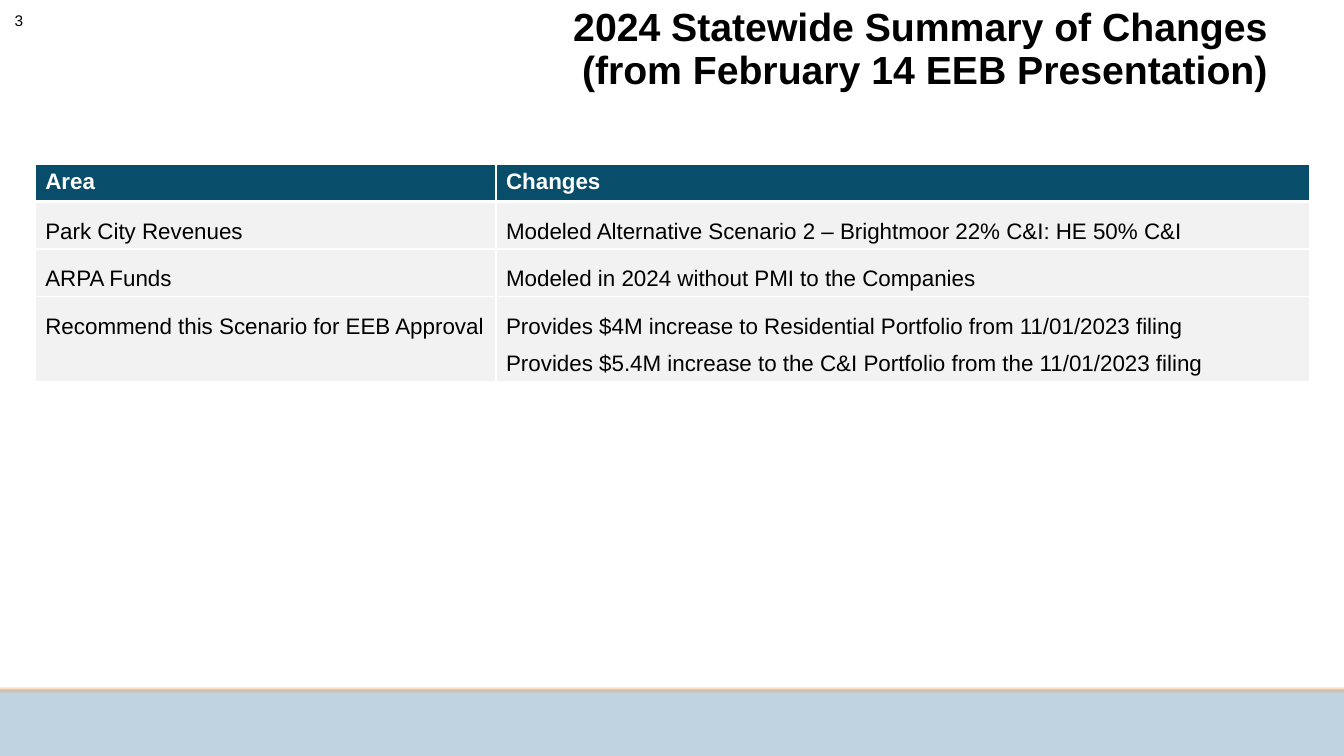
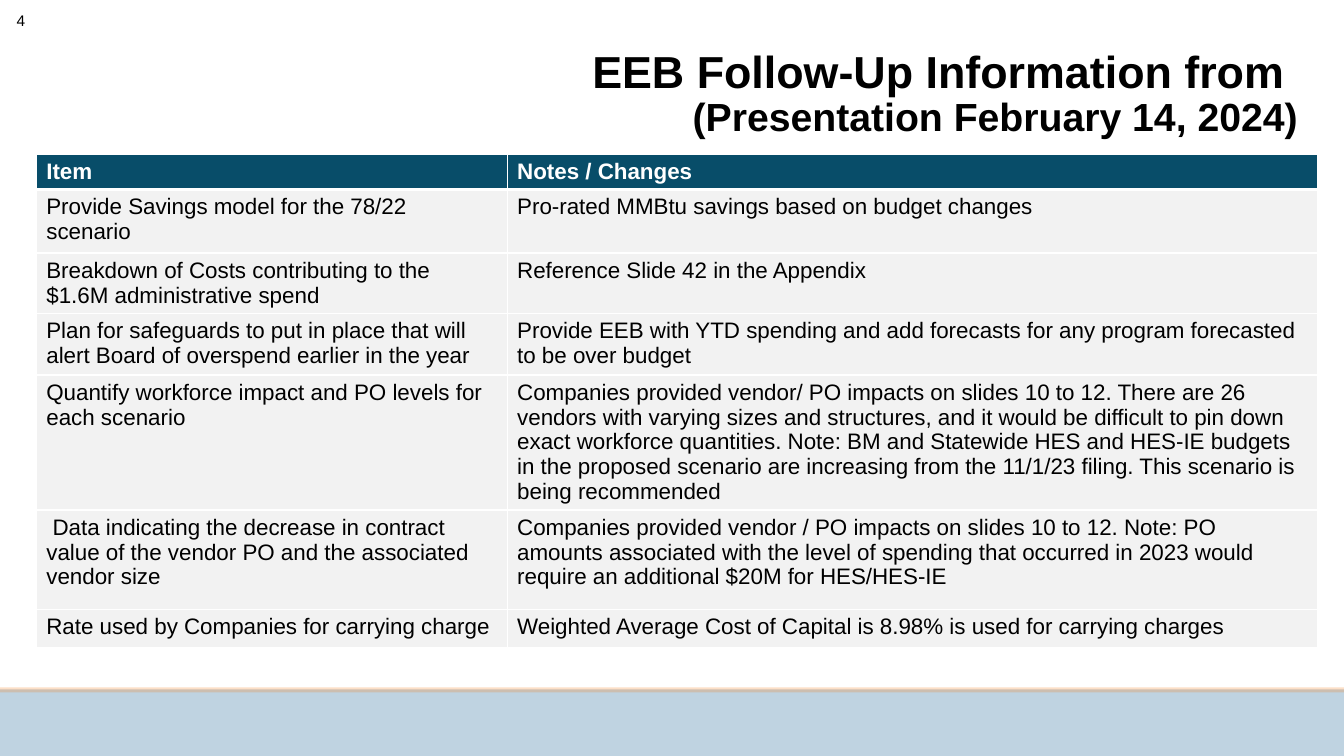
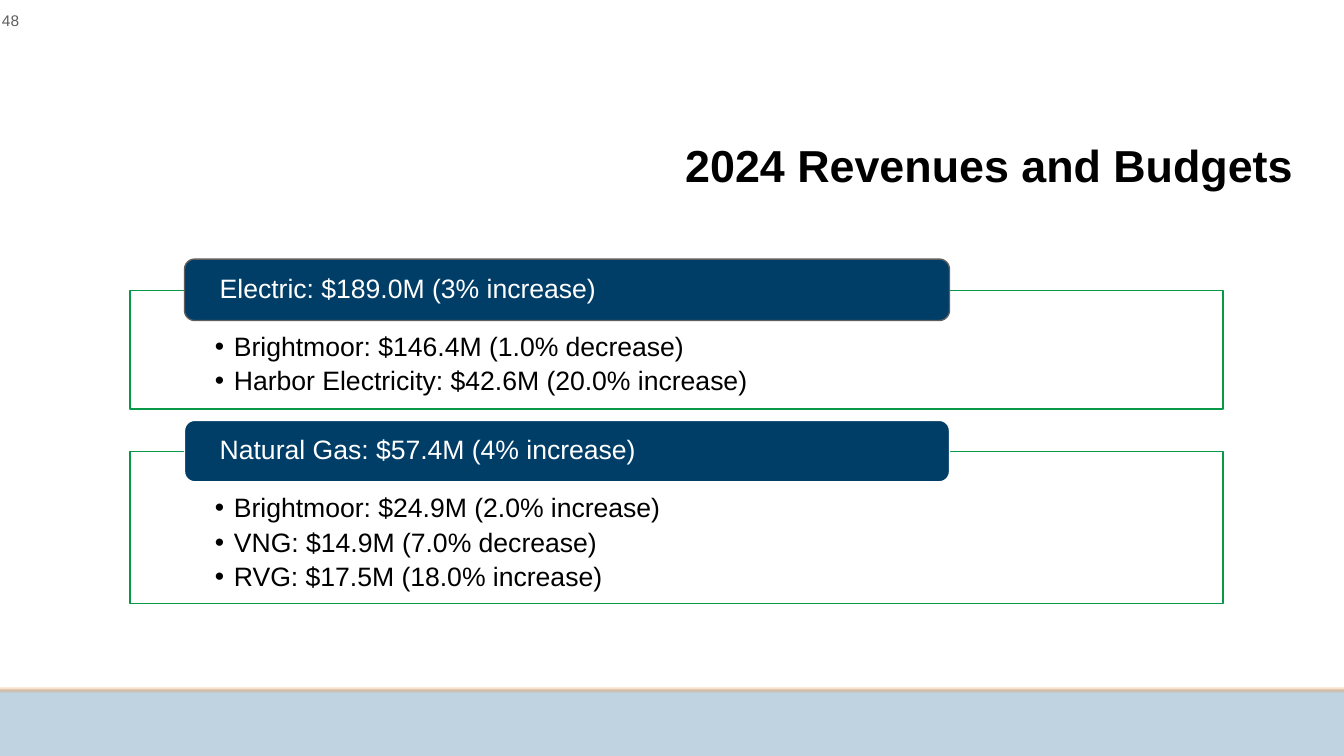
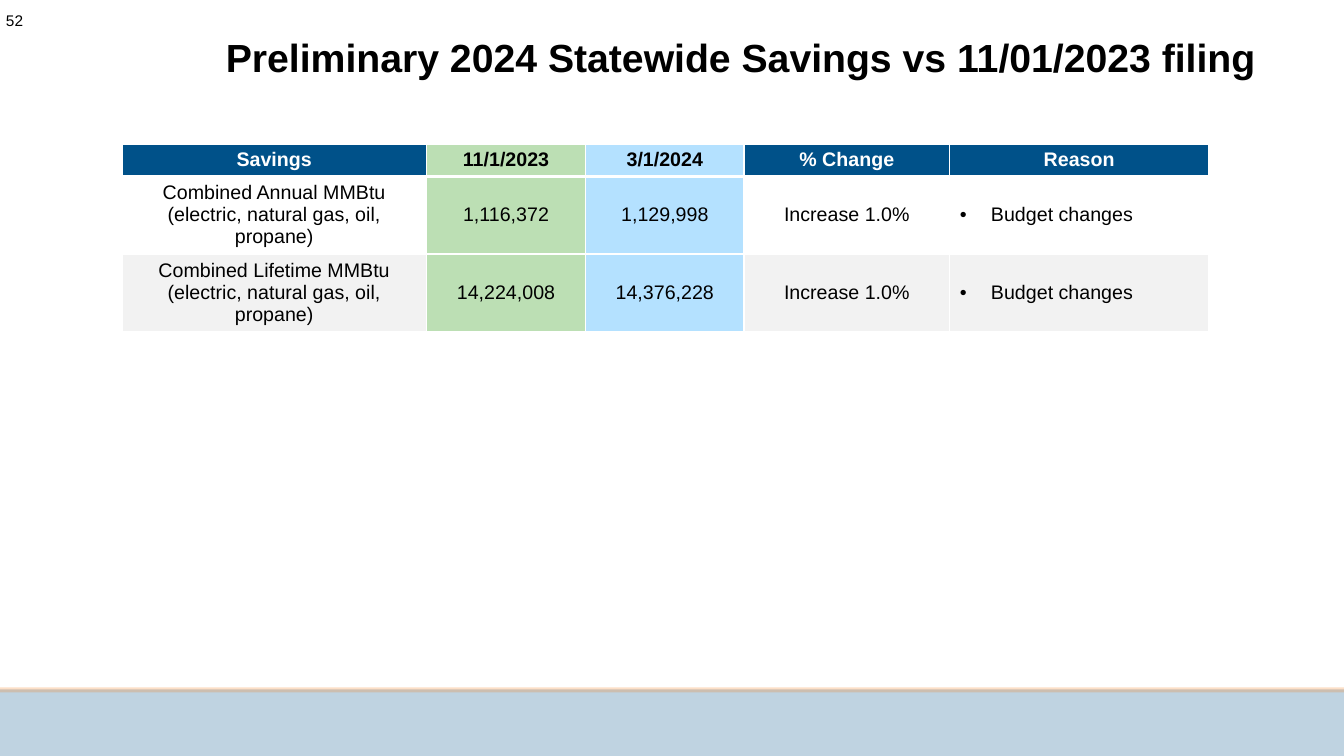
import pptx
import pptx.util
import pptx.dml.color
import pptx.enum.shapes
import pptx.enum.text
import pptx.oxml.ns
from lxml import etree

Inches = pptx.util.Inches
Pt = pptx.util.Pt
RGBColor = pptx.dml.color.RGBColor
Align = pptx.enum.text.PP_ALIGN
Anchor = pptx.enum.text.MSO_ANCHOR
Shape = pptx.enum.shapes.MSO_SHAPE
qn = pptx.oxml.ns.qn

FONT = "Arial"
BLACK = RGBColor(0, 0, 0)
WHITE = RGBColor(255, 255, 255)
GRAY = RGBColor(0x5E, 0x5E, 0x5E)
PALE_GRAY = RGBColor(0xF2, 0xF2, 0xF2)
BLUE = RGBColor(0x00, 0x51, 0x89)
NAVY = RGBColor(0x00, 0x3D, 0x67)
TEAL = RGBColor(0x08, 0x4D, 0x69)
ORANGE = RGBColor(0xF5, 0x82, 0x20)
GREEN = RGBColor(0x08, 0x99, 0x48)
PALE_GREEN = RGBColor(0xBC, 0xDF, 0xB4)
PALE_BLUE = RGBColor(0xB4, 0xE1, 0xFF)

SLIDE_WIDTH, SLIDE_HEIGHT = 13.33, 7.5
BANDS = [
    ((0, 6.84, SLIDE_WIDTH, 0.66), BLUE),
    ((0, 6.82, SLIDE_WIDTH, 0.05), ORANGE),
]

CHANGES = [
    ["Area", "Changes"],
    ["Park City Revenues", "Modeled Alternative Scenario 2 – Brightmoor 22% C&I: HE 50% C&I"],
    ["ARPA Funds", "Modeled in 2024 without PMI to the Companies"],
    ["Recommend this Scenario for EEB Approval",
     "Provides $4M increase to Residential Portfolio from 11/01/2023 filing\n"
     "Provides $5.4M increase to the C&I Portfolio from the 11/01/2023 filing"],
]
FOLLOW_UP = [
    ["Item", "Notes / Changes"],
    ["Provide Savings model for the 78/22 scenario",
     "Pro-rated MMBtu savings based on budget changes"],
    ["Breakdown of Costs contributing to the $1.6M administrative spend",
     "Reference Slide 42 in the Appendix"],
    ["Plan for safeguards to put in place that will alert Board of overspend earlier in the year",
     "Provide EEB with YTD spending and add forecasts for any program forecasted to be over budget"],
    ["Quantify workforce impact and PO levels for each scenario",
     "Companies provided vendor/ PO impacts on slides 10 to 12. There are 26 vendors with varying "
     "sizes and structures, and it would be difficult to pin down exact workforce quantities. "
     "Note: BM and Statewide HES and HES-IE budgets in the proposed scenario are increasing from "
     "the 11/1/23 filing. This scenario is being recommended"],
    [" Data indicating the decrease in contract value of the vendor PO and the associated vendor size",
     "Companies provided vendor / PO impacts on slides 10 to 12. Note: PO amounts associated with "
     "the level of spending that occurred in 2023 would require an additional $20M for HES/HES-IE"],
    ["Rate used by Companies for carrying charge",
     "Weighted Average Cost of Capital is 8.98% is used for carrying charges"],
]
SAVINGS = [
    ["Savings", "11/1/2023", "3/1/2024", "% Change", "Reason"],
    ["Combined Annual MMBtu (electric, natural gas, oil, propane)",
     "1,116,372", "1,129,998", "Increase 1.0%", "Budget changes"],
    ["Combined Lifetime MMBtu (electric, natural gas, oil, propane)",
     "14,224,008", "14,376,228", "Increase 1.0%", "Budget changes"],
]
BUDGETS = [
    ((1.29, 2.88, 10.84, 1.18), GRAY, "Electric: $189.0M (3% increase)",
     ["Brightmoor: $146.4M (1.0% decrease)", "Harbor Electricity: $42.6M (20.0% increase)"]),
    ((1.29, 4.48, 10.84, 1.51), WHITE, "Natural Gas: $57.4M (4% increase)",
     ["Brightmoor: $24.9M (2.0% increase)", "VNG: $14.9M (7.0% decrease)",
      "RVG: $17.5M (18.0% increase)"]),
]


def apply(target, values):
    """Set each attribute named in a dict of format values."""
    for name, value in values.items():
        setattr(target, name, value)


def place(shape, box):
    """Move and size a shape to a box in inches."""
    apply(shape, dict(zip(("left", "top", "width", "height"), map(Inches, box))))


def set_frame(frame, anchor, insets):
    """Set the wrapping, anchor and insets of a text frame."""
    names = ("margin_left", "margin_top", "margin_right", "margin_bottom")
    apply(frame, {"word_wrap": True, "auto_size": pptx.enum.text.MSO_AUTO_SIZE.NONE,
                  "vertical_anchor": anchor, **dict(zip(names, map(Inches, insets)))})


def style_run(run, size, color, bold=False):
    """Format one run of text."""
    apply(run.font, {"name": FONT, "size": Pt(size), "bold": bold})
    run.font.color.rgb = color


def write(frame, lines, size, color, bold=False, **paragraph_format):
    """Fill a text frame with one formatted paragraph per line."""
    frame.text = "\n".join(lines)
    for paragraph in frame.paragraphs:
        apply(paragraph, paragraph_format)
        for run in paragraph.runs:
            style_run(run, size, color, bold)


def add_bullet(paragraph, indent):
    """Give a paragraph a hanging bullet."""
    properties = paragraph._p.get_or_add_pPr()
    properties.set("marL", str(Inches(indent)))
    properties.set("indent", str(-Inches(indent)))
    etree.SubElement(properties, qn("a:buFont"), typeface=FONT)
    etree.SubElement(properties, qn("a:buChar"), char="•")


def add_box(slide, kind, box, fill, line=None):
    """Add a filled preset shape, outlined when a line colour is given."""
    shape = slide.shapes.add_shape(kind, *map(Inches, box))
    shape.shadow.inherit = False
    shape.fill.solid()
    shape.fill.fore_color.rgb = fill
    if line is None:
        shape.line.fill.background()
    else:
        shape.line.color.rgb = line
        shape.line.width = Pt(1)
    return shape


def move_bands_to_layout(slide):
    """Draw the translucent footer bands and put them on the slide layout."""
    tree = slide.slide_layout.element.cSld.spTree
    for index, (box, color) in enumerate(BANDS):
        band = add_box(slide, Shape.RECTANGLE, box, color)
        fill_color = band.element.spPr.find(qn("a:solidFill"))[0]
        etree.SubElement(fill_color, qn("a:alpha"), val="25000")
        tree.insert(2 + index, band.element)


def add_slide(presentation, number, box, lines, sizes, number_right=0.23, number_color=BLACK):
    """Add a slide with its right-aligned title and page number."""
    slide = presentation.slides.add_slide(presentation.slide_layouts[5])
    title = slide.shapes.title
    place(title, box)
    set_frame(title.text_frame, Anchor.BOTTOM, (0.1, 0.05, 0.1, 0.05))
    paragraph = title.text_frame.paragraphs[0]
    apply(paragraph, {"alignment": Align.RIGHT, "line_spacing": 0.9})
    for index, (line, size) in enumerate(zip(lines, sizes)):
        if index:
            paragraph.add_line_break()
        run = paragraph.add_run()
        run.text = line
        style_run(run, size, BLACK, True)
    page = slide.shapes.add_textbox(0, 0, Inches(number_right), Inches(0.4))
    set_frame(page.text_frame, Anchor.MIDDLE, (0, 0.05, 0, 0.05))
    write(page.text_frame, [number], 11, number_color, alignment=Align.RIGHT)
    return slide


def set_borders(cell, bottom):
    """Draw white borders around a cell."""
    properties = cell._tc.get_or_add_tcPr()
    for index, (side, width) in enumerate(zip("LRTB", (1, 1, 1, bottom))):
        line = etree.Element(qn(f"a:ln{side}"), w=str(Pt(width)))
        fill = etree.SubElement(line, qn("a:solidFill"))
        etree.SubElement(fill, qn("a:srgbClr"), val=str(WHITE))
        properties.insert(index, line)


def add_table(slide, origin, widths, heights, rows, size, style_cell):
    """Add a table whose cell looks come from style_cell(row, column)."""
    box = (*origin, sum(widths), sum(heights))
    table = slide.shapes.add_table(len(rows), len(widths), *map(Inches, box)).table
    for column, width in zip(table.columns, widths):
        column.width = Inches(width)
    for row, height in zip(table.rows, heights):
        row.height = Inches(height)
    for row_index, texts in enumerate(rows):
        header = row_index == 0
        for column_index, text in enumerate(texts):
            cell = table.cell(row_index, column_index)
            fill, color, anchor, paragraph_format = style_cell(row_index, column_index)
            cell.fill.solid()
            cell.fill.fore_color.rgb = fill
            cell.vertical_anchor = anchor
            write(cell.text_frame, text.split("\n"), size, color, header, **paragraph_format)
            set_borders(cell, 3 if header else 1)
    return table


def add_notes_table(slide, origin, widths, heights, rows, line_spacing):
    """Add a two-column table with a teal header and pale rows."""
    def style_cell(row, column):
        """Return fill, text colour, anchor and paragraph format."""
        if row == 0:
            return TEAL, WHITE, Anchor.TOP, {}
        return PALE_GRAY, BLACK, Anchor.TOP, {"line_spacing": line_spacing}
    add_table(slide, origin, widths, heights, rows, 16, style_cell)


def add_savings_table(slide, origin):
    """Add the savings comparison with its two coloured date columns."""
    date_fills = {1: PALE_GREEN, 2: PALE_BLUE}

    def style_cell(row, column):
        """Return fill, text colour, anchor and paragraph format."""
        fill = date_fills.get(column, (BLUE, WHITE, PALE_GRAY)[row])
        color = WHITE if fill == BLUE else BLACK
        reason = row > 0 and column == 4
        return (fill, color, Anchor.MIDDLE if row else Anchor.TOP,
                {"alignment": Align.LEFT if reason else Align.CENTER})
    table = add_table(slide, origin, [3.02, 1.58, 1.57, 2.04, 2.57], [0.32, 0.77, 0.77],
                      SAVINGS, 14, style_cell)
    for row in (1, 2):
        add_bullet(table.cell(row, 4).text_frame.paragraphs[0], 0.31)


def add_budget_group(slide, box, heading_line, heading, items):
    """Add an outlined list with a heading tab over its top edge."""
    left, top, width, height = box
    panel = add_box(slide, Shape.RECTANGLE, box, WHITE, GREEN)
    set_frame(panel.text_frame, Anchor.TOP, (0.84, 0.43, 0.84, 0.15))
    write(panel.text_frame, items, 19, BLACK, alignment=Align.LEFT,
          line_spacing=0.9, space_after=Pt(4))
    for paragraph in panel.text_frame.paragraphs:
        add_bullet(paragraph, 0.19)
    tab_box = (left + 0.54, top - 0.31, width * 0.7, 0.61)
    tab = add_box(slide, Shape.ROUNDED_RECTANGLE, tab_box, NAVY, heading_line)
    set_frame(tab.text_frame, Anchor.MIDDLE, (0.32, 0, 0.32, 0))
    write(tab.text_frame, [heading], 19, WHITE, alignment=Align.LEFT, line_spacing=0.9)


def main():
    """Build and save the presentation."""
    presentation = pptx.Presentation()
    apply(presentation, {"slide_width": Inches(SLIDE_WIDTH), "slide_height": Inches(SLIDE_HEIGHT)})

    slide = add_slide(presentation, "3", (0.67, 0.3, 12, 0.67),
                      ["2024 Statewide Summary of Changes", "(from February 14 EEB Presentation)"],
                      [28, 28])
    move_bands_to_layout(slide)
    add_notes_table(slide, (0.35, 1.63), [4.57, 8.07], [0.37, 0.43, 0.4, 0.4], CHANGES, 1.5)

    slide = add_slide(presentation, "4", (0.87, 0.31, 12.1, 1.13),
                      ["EEB Follow-Up Information from ", "(Presentation February 14, 2024)"],
                      [32, 28], number_right=0.25)
    add_notes_table(slide, (0.36, 1.53), [4.67, 8.04],
                    [0.35, 0.63, 0.6, 0.61, 1.34, 0.99, 0.38], FOLLOW_UP, 1)

    slide = add_slide(presentation, "48", (0.93, 0.93, 12, 1.03), ["2024 Revenues and Budgets"],
                      [32], number_right=0.19, number_color=GRAY)
    for group in BUDGETS:
        add_budget_group(slide, *group)

    slide = add_slide(presentation, "52", (0.67, 0.3, 11.88, 0.55),
                      ["Preliminary 2024 Statewide Savings vs 11/01/2023 filing"], [28])
    add_savings_table(slide, (1.21, 1.43))

    presentation.save("out.pptx")


if __name__ == "__main__":
    main()
